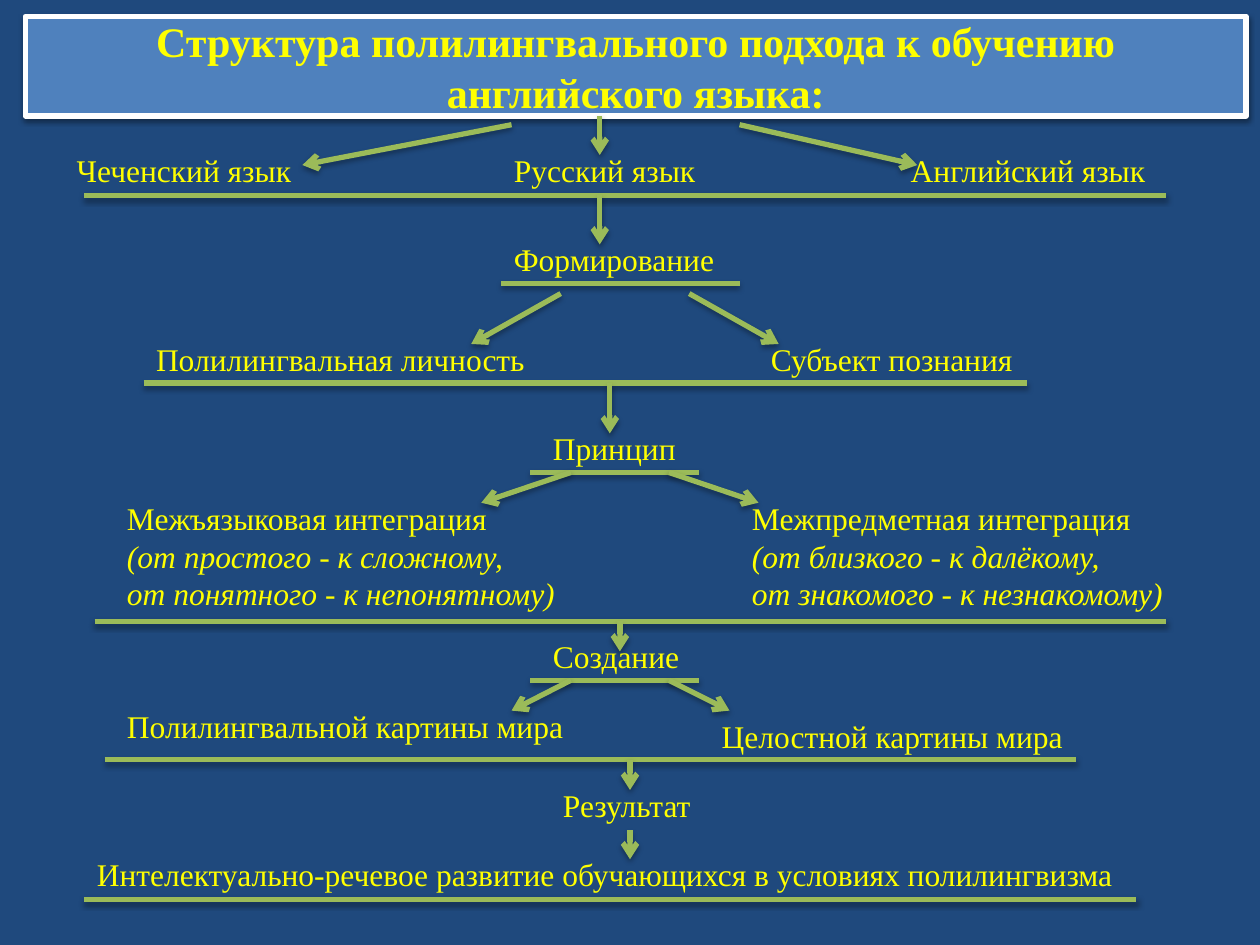
from dataclasses import dataclass

from lxml import etree
from pptx import Presentation
from pptx import util as u
from pptx.dml import color
from pptx.enum import shapes, text
from pptx.oxml import ns


@dataclass(frozen=True)
class Theme:
    back: str = "1F497D"
    head: str = "4F81BD"
    edge: str = "FFFFFF"
    ink: str = "FFFF00"
    rule: str = "9BBB59"
    font: str = "Times New Roman"
    large: int = 24
    small: int = 18
    stroke: int = 3


THEME = Theme()


def paint(fill, tone):
    fill.solid()
    fill.fore_color.rgb = color.RGBColor.from_string(tone)


def stroke(line, tone):
    paint(line.fill, tone)
    line.width = u.Pt(THEME.stroke)


def shade(item, drop, alpha):
    props = item._element.spPr
    for old in props.findall(ns.qn("a:effectLst")):
        props.remove(old)
    effects = etree.SubElement(props, ns.qn("a:effectLst"))
    outer = etree.SubElement(effects, ns.qn("a:outerShdw"), blurRad="40000",
                             dist=str(u.Pt(drop)), dir="5400000", rotWithShape="0")
    tone = etree.SubElement(outer, ns.qn("a:srgbClr"), val="000000")
    etree.SubElement(tone, ns.qn("a:alpha"), val=str(alpha * 1000))


def style(run, size, bold=False, slant=False):
    font = run.font
    font.name, font.size = THEME.font, u.Pt(size)
    font.bold, font.italic = bold, slant
    font.color.rgb = color.RGBColor.from_string(THEME.ink)


def add_line(slide, x1, y1, x2, y2, arrow=False):
    line = slide.shapes.add_connector(shapes.MSO_CONNECTOR.STRAIGHT,
                                      *map(u.Inches, (x1, y1, x2, y2)))
    stroke(line.line, THEME.rule)
    if arrow:
        etree.SubElement(line.line._get_or_add_ln(), ns.qn("a:tailEnd"), type="arrow")
    shade(line, 1.8, 35)
    return line


def add_arrows(slide, left, base, arrows):
    for x1, y1, x2, y2 in arrows:
        add_line(slide, left + x1, base + y1, left + x2, base + y2, arrow=True)


def add_label(slide, left, top, width, words):
    height = 0.4 + 0.305 * words.count("\n")
    label = slide.shapes.add_textbox(*map(u.Inches, (left, top, width, height)))
    frame = label.text_frame
    frame.word_wrap = True
    frame.text = words
    for row, para in enumerate(frame.paragraphs):
        for run in para.runs:
            style(run, THEME.small, slant=row > 0)
    return label


def add_title(slide, box, words, arrows):
    left, top, width, height = box
    head = slide.shapes.add_shape(shapes.MSO_SHAPE.RECTANGLE, *map(u.Inches, box))
    paint(head.fill, THEME.head)
    stroke(head.line, THEME.edge)
    shade(head, 1.6, 38)
    frame = head.text_frame
    frame.word_wrap = True
    frame.vertical_anchor = text.MSO_ANCHOR.MIDDLE
    frame.text = words
    para = frame.paragraphs[0]
    para.alignment = text.PP_ALIGN.CENTER
    style(para.runs[0], THEME.large, bold=True)
    add_arrows(slide, left, top + height, arrows)


def add_tier(slide, box, labels, arrows=()):
    left, top, width, height = box
    base = top + height
    for dx, dy, wide, words in labels:
        add_label(slide, left + dx, top + dy, wide, words)
    add_line(slide, left, base, left + width, base)
    add_arrows(slide, left, base, arrows)


def add_result(slide, box, words, drop):
    left, top, width, height = box
    label = add_label(slide, left, top, width, words)
    mid, base = left + width / 2, top + height
    arrow = add_line(slide, mid, base, mid, base + drop, arrow=True)
    arrow.begin_connect(label, 2)


TIERS = [
    ((0.67, 1.15, 8.58, 0.4),
     [(-0.16, 0, 2.22, "Чеченский язык"),
      (3.31, 0, 2.05, "Русский язык"),
      (6.46, 0, 2.13, "Английский язык")],
     [(4.09, 0, 4.09, 0.39)]),
    ((3.98, 1.86, 1.89, 0.39),
     [(0, 0, 1.81, "Формирование")],
     [(0.47, 0.08, -0.24, 0.48), (1.49, 0.08, 2.2, 0.48)]),
    ((1.14, 2.65, 7.01, 0.39),
     [(0, 0, 3.16, "Полилингвальная личность"),
      (4.88, 0, 2.14, "Субъект познания")],
     [(3.7, 0, 3.7, 0.4)]),
    ((4.21, 3.36, 1.34, 0.39),
     [(0.08, 0, 1.19, "Принцип")],
     [(0.32, 0, -0.39, 0.24), (1.1, 0, 1.81, 0.24)]),
    ((0.75, 3.91, 8.5, 1.02),
     [(0.16, 0, 3.63, "Межъязыковая интеграция\n(от простого - к сложному,\n"
                      "от понятного - к непонятному)"),
      (5.12, 0, 3.7, "Межпредметная интеграция\n(от близкого - к далёкому,\n"
                     "от знакомого - к незнакомому)")],
     [(4.17, 0, 4.17, 0.24)]),
    ((4.21, 5.01, 1.34, 0.39),
     [(0.08, 0, 1.28, "Создание")],
     [(0.32, 0, -0.15, 0.24), (1.1, 0, 1.58, 0.24)]),
    ((0.83, 5.56, 7.71, 0.47),
     [(0.08, 0, 3.7, "Полилингвальной картины мира"),
      (4.8, 0.08, 2.94, "Целостной картины мира")],
     [(4.17, 0, 4.17, 0.24)]),
    ((0.67, 6.74, 8.35, 0.4),
     [(0, 0, 8.35, "Интелектуально-речевое развитие обучающихся "
                   "в условиях полилингвизма")]),
]


def main():
    deck = Presentation()
    deck.slide_width, deck.slide_height = u.Inches(10), u.Inches(7.5)
    slide = deck.slides.add_slide(deck.slide_layouts[6])
    paint(slide.background.fill, THEME.back)
    add_title(slide, (0.2, 0.13, 9.69, 0.79),
              "Структура полилингвального подхода к обучению английского языка:",
              [(3.86, 0.07, 2.2, 0.39), (4.56, 0, 4.56, 0.31), (5.67, 0.07, 7.08, 0.39)])
    for tier in TIERS:
        add_tier(slide, *tier)
    add_result(slide, (4.37, 6.19, 1.26, 0.4), "Результат", 0.23)
    deck.save("out.pptx")


if __name__ == "__main__":
    main()
